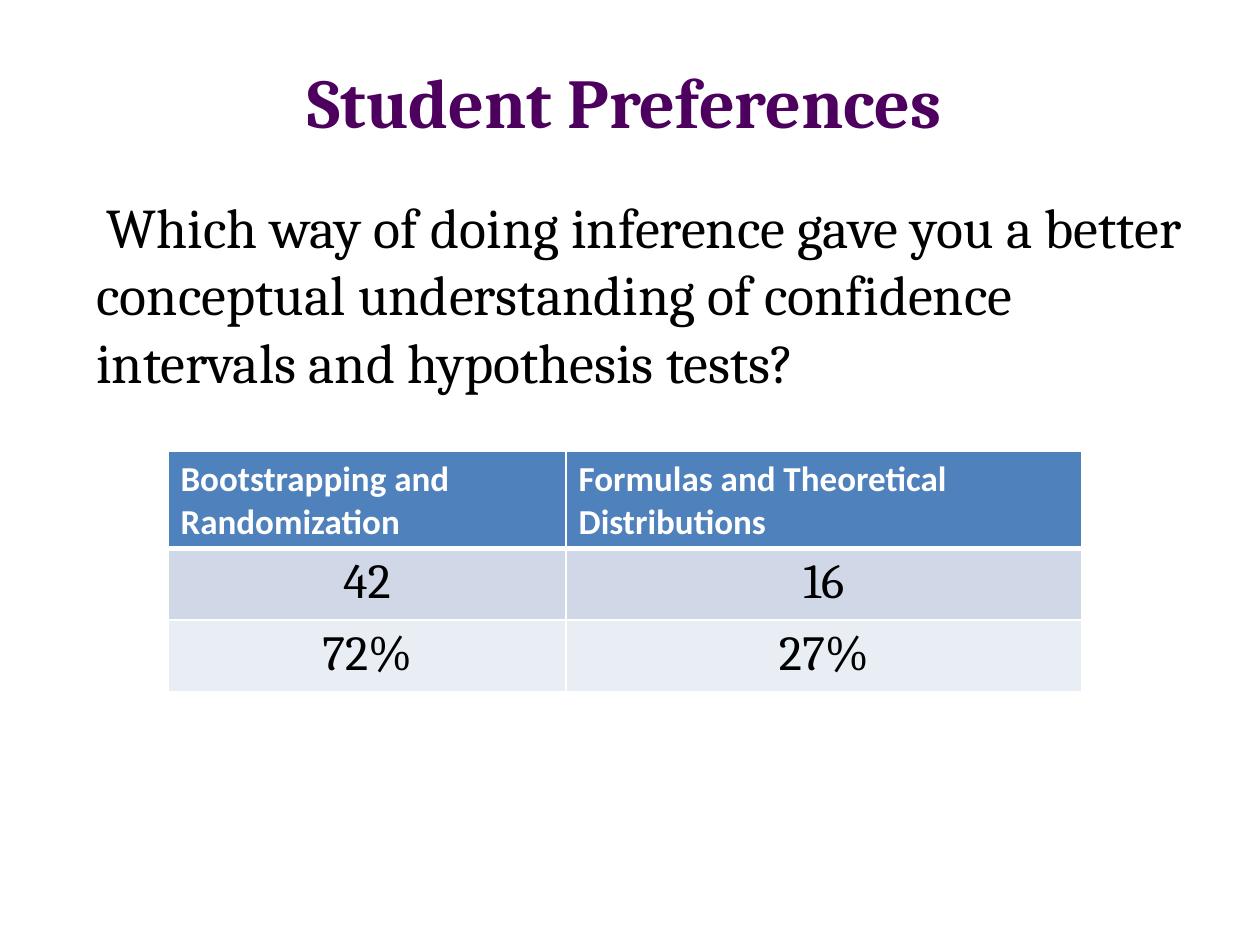
from dataclasses import dataclass

from lxml import etree
from pptx import Presentation
from pptx.dml.color import RGBColor
from pptx.enum import text
from pptx.oxml import ns
from pptx.util import Pt


@dataclass(frozen=True)
class Theme:
    serif: str = "Cambria"
    sans: str = "Calibri"
    purple: str = "4E005F"
    black: str = "000000"
    white: str = "FFFFFF"
    header_blue: str = "4F81BD"
    band_dark: str = "D0D8E8"
    band_light: str = "E9EDF4"
    title_size: float = 40
    question_size: float = 32
    count_size: float = 28
    header_size: float = 20


@dataclass(frozen=True)
class Style:
    font: str
    size: float
    color: str
    bold: bool = False
    align: text.PP_ALIGN = text.PP_ALIGN.LEFT


@dataclass(frozen=True)
class Row:
    labels: tuple[str, str]
    height: float
    fill: str
    style: Style
    rule_below: float = 1


THEME = Theme()
TITLE = Style(THEME.serif, THEME.title_size, THEME.purple, True, text.PP_ALIGN.CENTER)
QUESTION = Style(THEME.serif, THEME.question_size, THEME.black)
HEADER = Style(THEME.sans, THEME.header_size, THEME.white, True)
COUNT = Style(THEME.serif, THEME.count_size, THEME.black, align=text.PP_ALIGN.CENTER)

COLUMN_WIDTHS = (227.5, 294.5)
ROWS = (
    Row(("Bootstrapping and Randomization", "Formulas and Theoretical Distributions"),
        55, THEME.header_blue, HEADER, 3),
    Row(("42", "16"), 41, THEME.band_dark, COUNT),
    Row(("72%", "27%"), 41, THEME.band_light, COUNT),
)


def place(shape, left: float, top: float, width: float, height: float) -> None:
    lengths = {"left": left, "top": top, "width": width, "height": height}
    for name, value in lengths.items():
        setattr(shape, name, Pt(value))


def write(frame, wording: str, style: Style):
    frame.word_wrap = True
    paragraph = frame.paragraphs[0]
    paragraph.alignment = style.align
    run = paragraph.add_run()
    run.text = wording
    formats = {"name": style.font, "size": Pt(style.size), "bold": style.bold}
    for name, value in formats.items():
        setattr(run.font, name, value)
    run.font.color.rgb = RGBColor.from_string(style.color)
    return paragraph


def add_borders(cell, top: float, bottom: float) -> None:
    properties = cell._tc.get_or_add_tcPr()
    widths = {"a:lnL": 1, "a:lnR": 1, "a:lnT": top, "a:lnB": bottom}
    for position, (tag, width) in enumerate(widths.items()):
        line = etree.Element(ns.qn(tag), w=str(Pt(width)))
        solid = etree.SubElement(line, ns.qn("a:solidFill"))
        etree.SubElement(solid, ns.qn("a:srgbClr"), val=THEME.white)
        properties.insert(position, line)


def add_preferences(slide, left: float, top: float) -> None:
    frame = slide.shapes.add_table(
        len(ROWS), len(COLUMN_WIDTHS), Pt(left), Pt(top),
        Pt(sum(COLUMN_WIDTHS)), Pt(sum(row.height for row in ROWS)))
    preferences = frame.table
    for column, width in zip(preferences.columns, COLUMN_WIDTHS):
        column.width = Pt(width)
    rule_above = 1
    for index, row in enumerate(ROWS):
        preferences.rows[index].height = Pt(row.height)
        for cell, label in zip(preferences.rows[index].cells, row.labels):
            write(cell.text_frame, label, row.style)
            cell.fill.solid()
            cell.fill.fore_color.rgb = RGBColor.from_string(row.fill)
            add_borders(cell, rule_above, row.rule_below)
        rule_above = row.rule_below


def main() -> None:
    deck = Presentation()
    deck.slide_width, deck.slide_height = Pt(720), Pt(540)
    slide = deck.slides.add_slide(deck.slide_layouts[5])

    title = slide.shapes.title
    place(title, 36, 30, 642, 96)
    title.text_frame.vertical_anchor = text.MSO_ANCHOR.TOP
    write(title.text_frame, "Student Preferences", TITLE)

    question = slide.shapes.add_textbox(Pt(48), Pt(106.5), Pt(642), Pt(334))
    paragraph = write(
        question.text_frame,
        "Which way of doing inference gave you a better conceptual understanding "
        "of confidence intervals and hypothesis tests?",
        QUESTION)
    paragraph.space_after = Pt(18)
    paragraph._p.get_or_add_pPr().set("indent", str(Pt(6)))

    add_preferences(slide, 96, 258)
    deck.save("out.pptx")


if __name__ == "__main__":
    main()
